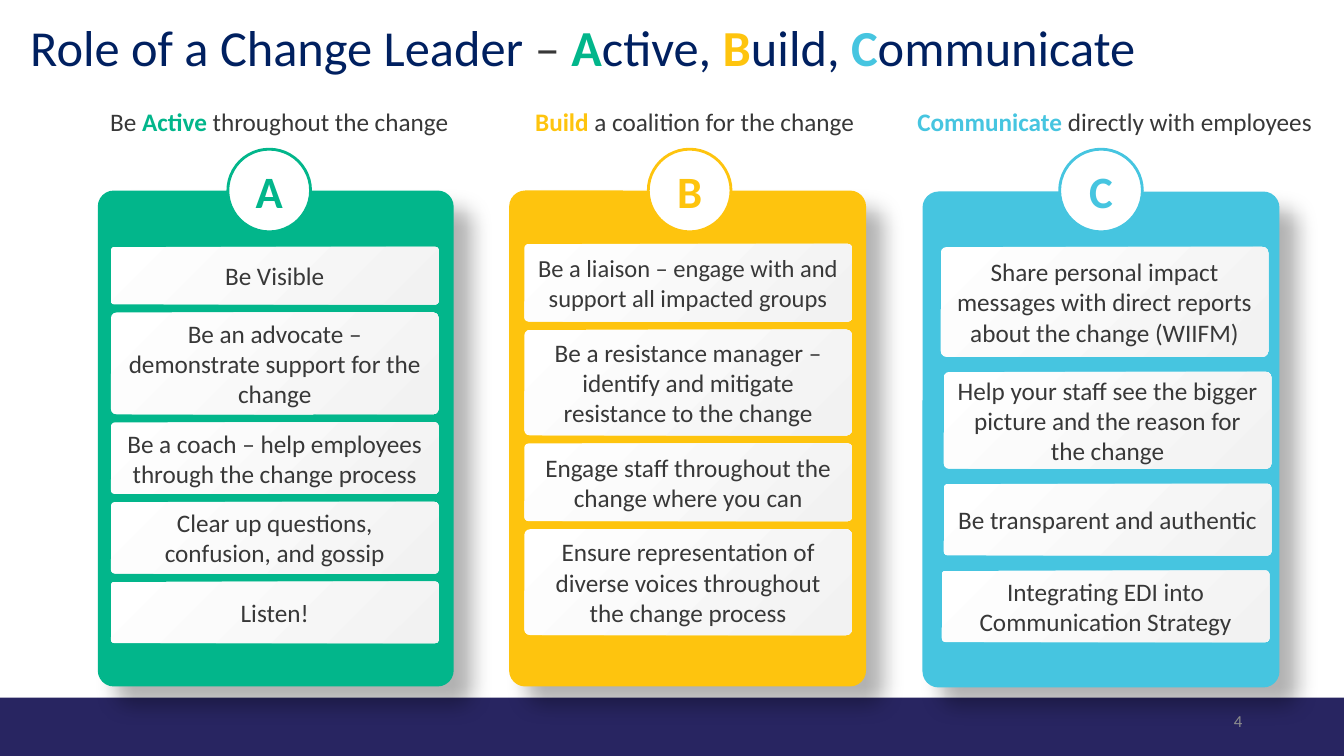
from dataclasses import dataclass

from lxml import etree
from pptx import Presentation
from pptx.dml.color import RGBColor
from pptx.enum import shapes, text
from pptx.oxml import ns
from pptx.util import Inches, Pt


@dataclass(frozen=True)
class Theme:
    font: str = "Calibri"
    ink: str = "383838"
    navy: str = "002060"
    band: str = "282561"
    number: str = "909090"
    white: str = "FFFFFF"
    card_end: str = "F2F2F2"
    green: str = "02B68B"
    yellow: str = "FEC40E"
    blue: str = "46C5E0"
    title_size: float = 36
    badge_size: float = 32
    body_size: float = 18
    tight_size: float = 17.5
    number_size: float = 12


@dataclass(frozen=True)
class Card:
    message: str
    height: float
    nudge: float = 0
    size: float = Theme.body_size


@dataclass(frozen=True)
class Column:
    letter: str
    color: str
    panel: tuple
    badge_left: float
    caption_box: tuple
    caption: list
    card_left: float
    card_top: float
    gap: float
    cards: list


THEME = Theme()
CENTER, LEFT, RIGHT = text.PP_ALIGN.CENTER, text.PP_ALIGN.LEFT, text.PP_ALIGN.RIGHT
SHAPE = shapes.MSO_SHAPE

TITLE = [
    ("Role of a Change Leader ", THEME.navy, False), ("– ", THEME.ink, False),
    ("A", THEME.green, True), ("ctive, ", THEME.navy, False),
    ("B", THEME.yellow, True), ("uild, ", THEME.navy, False),
    ("C", THEME.blue, True), ("ommunicate", THEME.navy, False),
]

COLUMNS = [
    Column("A", THEME.green, (0.97, 1.89, 3.53, 4.92), 2.26, (0.67, 1.01, 4.2, 0.4),
           [("Be ", THEME.ink, False), ("Active", THEME.green, True),
            (" throughout the change", THEME.ink, False)],
           1.1, 2.45, 0.08, [
               Card("Be Visible", 0.57),
               Card("Be an advocate – demonstrate support for the change", 1.01),
               Card("Be a coach – help employees through the change process", 0.71),
               Card("Clear up questions, confusion, and gossip", 0.71),
               Card("Listen!", 0.61)]),
    Column("B", THEME.yellow, (5.05, 1.89, 3.54, 4.92), 6.43, (4.79, 1.01, 4.2, 0.4),
           [("Build ", THEME.yellow, True),
            ("a coalition for the change", THEME.ink, False)],
           5.2, 2.42, 0.08, [
               Card("Be a liaison – engage with and support all impacted groups", 0.77,
                    size=THEME.tight_size),
               Card("Be a resistance manager – identify and mitigate resistance to the change", 1.05),
               Card("Engage staff throughout the change where you can", 0.77),
               Card("Ensure representation of diverse voices throughout the change process", 1.05)]),
    Column("C", THEME.blue, (9.15, 1.9, 3.54, 4.92), 10.51, (8.72, 1.01, 4.67, 0.4),
           [("Communicate", THEME.blue, True),
            (" directly with employees", THEME.ink, False)],
           9.33, 2.45, 0.15, [
               Card("Share personal impact messages with direct reports about the change (WIIFM)", 1.09),
               Card("Help your staff see the bigger picture and the reason for the change", 0.96, 0.03),
               Card("Be transparent and authentic", 0.71, 0.03),
               Card("Integrating EDI into Communication Strategy", 0.71, 0.01)]),
]


def apply(target, formats):
    for name, value in formats.items():
        setattr(target, name, value)


def write(shape, spans, size, align=CENTER, anchor=text.MSO_ANCHOR.MIDDLE, spacing=1.0):
    """Fill one paragraph with (words, colour, bold) spans."""
    frame = shape.text_frame
    apply(frame, {"word_wrap": True, "auto_size": text.MSO_AUTO_SIZE.NONE,
                  "vertical_anchor": anchor})
    paragraph = frame.paragraphs[0]
    apply(paragraph, {"alignment": align, "line_spacing": spacing})
    for words, color, bold in spans:
        run = paragraph.add_run()
        run.text = words
        apply(run.font, {"name": THEME.font, "size": Pt(size), "bold": bold})
        run.font.color.rgb = RGBColor.from_string(color)


def add_block(slide, kind, box, color, corner=None):
    block = slide.shapes.add_shape(kind, *map(Inches, box))
    block.shadow.inherit = False
    block.fill.solid()
    block.fill.fore_color.rgb = RGBColor.from_string(color)
    block.line.fill.background()
    if corner is not None:
        block.adjustments[0] = corner
    return block


def add_label(slide, box, spans, size, **layout):
    label = slide.shapes.add_textbox(*map(Inches, box))
    write(label, spans, size, **layout)


def add_panel(slide, column):
    panel = add_block(slide, SHAPE.ROUNDED_RECTANGLE, column.panel, column.color, 0.045)
    effects = panel._element.spPr.find(ns.qn("a:effectLst"))
    shadow = etree.SubElement(effects, ns.qn("a:outerShdw"), blurRad=str(Pt(15)),
                              dist=str(Pt(18)), dir=str(45 * 60000),
                              algn="tl", rotWithShape="0")
    black = etree.SubElement(shadow, ns.qn("a:srgbClr"), val="000000")
    etree.SubElement(black, ns.qn("a:alpha"), val="30000")


def add_badge(slide, column):
    badge = add_block(slide, SHAPE.OVAL, (column.badge_left, 1.48, 0.82, 0.82), THEME.white)
    badge.line.color.rgb = RGBColor.from_string(column.color)
    badge.line.width = Pt(2)
    write(badge, [(column.letter, column.color, True)], THEME.badge_size)


def add_cards(slide, column):
    top = column.card_top
    for card in column.cards:
        box = (column.card_left + card.nudge, top, 3.25, card.height)
        block = add_block(slide, SHAPE.ROUNDED_RECTANGLE, box, THEME.white, 0.055)
        block.fill.gradient()
        block.fill.gradient_angle = 315
        for stop, color in zip(block.fill.gradient_stops, (THEME.white, THEME.card_end)):
            stop.color.rgb = RGBColor.from_string(color)
        write(block, [(card.message, THEME.ink, False)], card.size)
        top += card.height + column.gap


def main():
    deck = Presentation()
    apply(deck, {"slide_width": Inches(13.33), "slide_height": Inches(7.5)})
    slide = deck.slides.add_slide(deck.slide_layouts[5])

    # Title
    title = slide.shapes.title
    apply(title, {"left": Inches(0.2), "top": Inches(0),
                  "width": Inches(13.13), "height": Inches(1)})
    write(title, TITLE, THEME.title_size, align=LEFT, spacing=0.9)

    # Footer band and slide number
    add_block(slide, SHAPE.RECTANGLE, (0, 6.92, 13.33, 0.58), THEME.band)
    add_label(slide, (9.42, 6.95, 3, 0.4), [("4", THEME.number, False)],
              THEME.number_size, align=RIGHT)

    # The three roles
    for column in COLUMNS:
        add_panel(slide, column)
        add_badge(slide, column)
        add_label(slide, column.caption_box, column.caption, THEME.body_size,
                  anchor=text.MSO_ANCHOR.TOP)
        add_cards(slide, column)

    deck.save("out.pptx")


if __name__ == "__main__":
    main()
